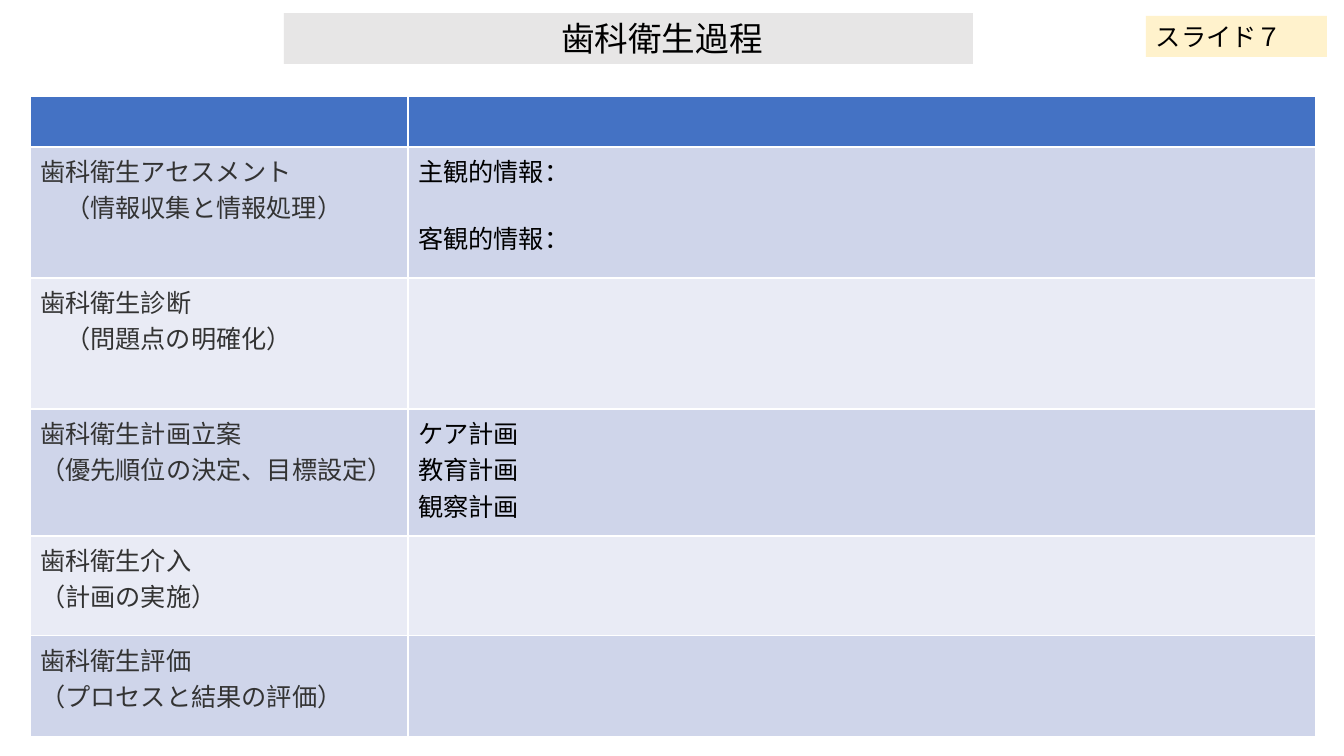
from pptx import Presentation
from pptx.dml.color import RGBColor
from pptx.enum.text import MSO_ANCHOR, MSO_AUTO_SIZE, PP_ALIGN
from pptx.util import Pt
from lxml.etree import SubElement
from pptx.oxml.ns import qn

BLACK = RGBColor(0x00, 0x00, 0x00)
CHARCOAL = RGBColor(0x33, 0x33, 0x33)
GRAY = RGBColor(0xE7, 0xE6, 0xE6)
CREAM = RGBColor(0xFF, 0xF2, 0xCC)
HEADER_BLUE = RGBColor(0x44, 0x72, 0xC4)
BANDS = (RGBColor(0xE9, 0xEB, 0xF5), RGBColor(0xCF, 0xD5, 0xEA))
LATIN, JAPANESE = "Calibri", "Noto Sans CJK JP"

TITLE = "歯科衛生過程"
LABEL = "スライド７"
STEPS = [
    {"height": 131, "step": ["歯科衛生アセスメント", "（情報収集と情報処理）"], "indent": 25,
     "details": ["主観的情報：", "客観的情報："], "gap": 22},
    {"height": 131, "step": ["歯科衛生診断", "（問題点の明確化）"], "indent": 25},
    {"height": 127, "step": ["歯科衛生計画立案", "（優先順位の決定、目標設定）"],
     "details": ["ケア計画", "教育計画", "観察計画"]},
    {"height": 100, "step": ["歯科衛生介入", "（計画の実施）"]},
    {"height": 101, "step": ["歯科衛生評価", "（プロセスと結果の評価）"]},
]
HEADER_HEIGHT = 51
COLUMN_WIDTHS = (378, 908)
TITLE_BOX = (284, 13, 689, 51)
LABEL_BOX = (1146, 16, 181, 41)
TABLE_ORIGIN = (30, 96)


def px(length):
    """Turn pixels into EMU."""
    return round(length * 914400 / 100.8)


def write(frame, lines, font=LATIN, size=18, color=BLACK, align=PP_ALIGN.LEFT, indent=0, gap=0):
    """Write lines as paragraphs; indent and gap apply after the first."""
    for index, line in enumerate(lines):
        paragraph = frame.add_paragraph() if index else frame.paragraphs[0]
        paragraph.alignment = align
        if index and indent:
            paragraph._p.get_or_add_pPr().set("marL", str(px(indent)))
        if index and gap:
            paragraph.space_before = Pt(gap)
        run = paragraph.add_run()
        run.text = line
        run.font.name = font
        run.font.size = Pt(size)
        run.font.color.rgb = color
        SubElement(run._r.get_or_add_rPr(), qn("a:ea")).set("typeface", JAPANESE)


def style_box(shape, box, fill):
    """Place and fill a one-line box."""
    shape.left, shape.top, shape.width, shape.height = map(px, box)
    shape.fill.solid()
    shape.fill.fore_color.rgb = fill
    frame = shape.text_frame
    frame.word_wrap = True
    frame.auto_size = MSO_AUTO_SIZE.NONE
    frame.vertical_anchor = MSO_ANCHOR.MIDDLE
    return frame


def add_step_table(slide):
    """Add the table of process steps."""
    heights = [HEADER_HEIGHT] + [row["height"] for row in STEPS]
    table = slide.shapes.add_table(
        len(heights), len(COLUMN_WIDTHS), *map(px, TABLE_ORIGIN),
        px(sum(COLUMN_WIDTHS)), px(sum(heights))).table
    for column, width in zip(table.columns, COLUMN_WIDTHS):
        column.width = px(width)
    for index, height in enumerate(heights):
        table.rows[index].height = px(height)
        for cell in table.rows[index].cells:
            cell.fill.solid()
            cell.fill.fore_color.rgb = BANDS[index % 2] if index else HEADER_BLUE
    for index, row in enumerate(STEPS, start=1):
        write(table.cell(index, 0).text_frame, row["step"], font=JAPANESE,
              color=CHARCOAL, indent=row.get("indent", 0))
        write(table.cell(index, 1).text_frame, row.get("details", []), gap=row.get("gap", 0))


def main():
    """Build and save the slide."""
    presentation = Presentation()
    presentation.slide_width, presentation.slide_height = px(1344), px(756)
    slide = presentation.slides.add_slide(presentation.slide_layouts[5])
    title_frame = style_box(slide.shapes.title, TITLE_BOX, GRAY)
    title_frame.margin_left = px(77)
    write(title_frame, [TITLE], size=24, align=PP_ALIGN.CENTER)
    label = slide.shapes.add_textbox(*map(px, LABEL_BOX))
    write(style_box(label, LABEL_BOX, CREAM), [LABEL])
    add_step_table(slide)
    presentation.save("out.pptx")


if __name__ == "__main__":
    main()
